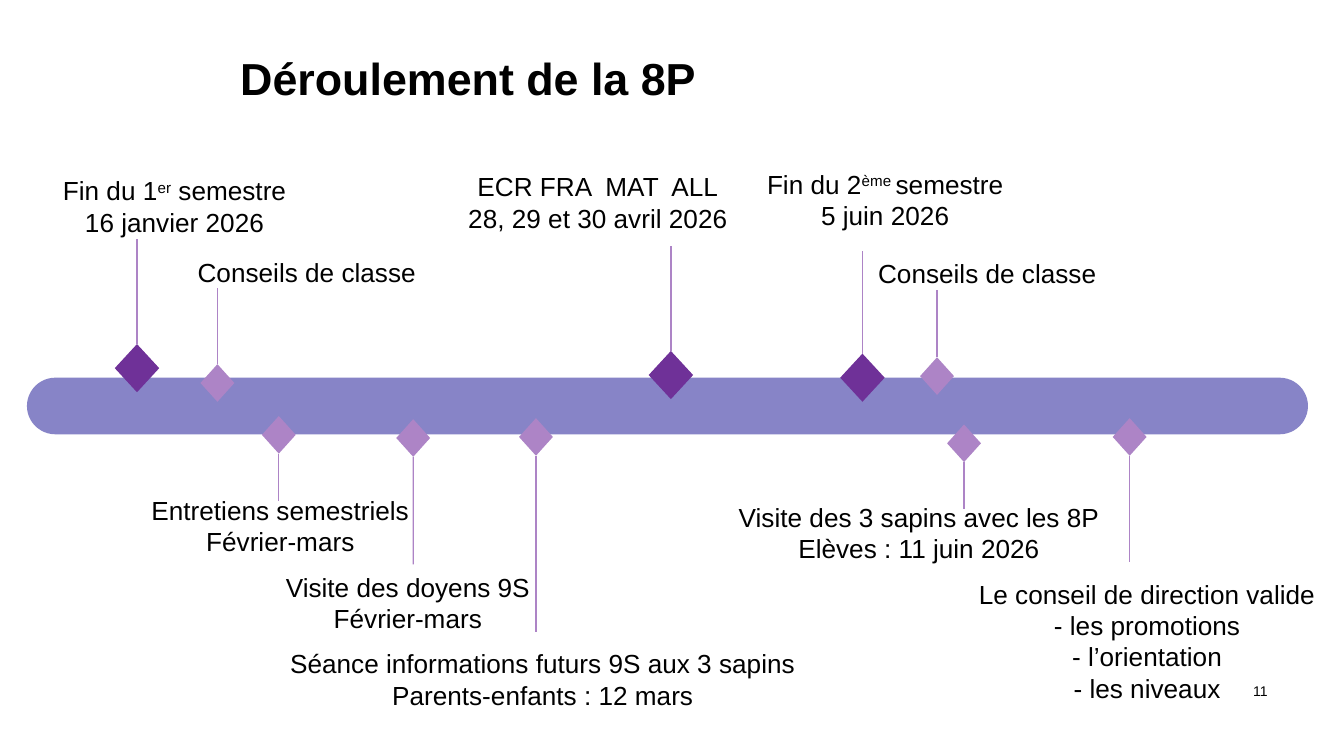
from dataclasses import dataclass

from lxml import etree
from pptx import Presentation
from pptx.dml.color import RGBColor
from pptx.enum.shapes import MSO_CONNECTOR, MSO_SHAPE
from pptx.enum.text import MSO_ANCHOR, PP_ALIGN
from pptx.oxml.ns import qn
from pptx.util import Cm, Pt

BLACK = RGBColor(0x00, 0x00, 0x00)
BAR_BLUE = RGBColor(0x87, 0x84, 0xC7)
LILAC = RGBColor(0xAD, 0x84, 0xC6)
PURPLE = RGBColor(0x6F, 0x31, 0x98)
FONT = "Arial"

ROUNDED, DIAMOND = MSO_SHAPE.ROUNDED_RECTANGLE, MSO_SHAPE.DIAMOND
STRAIGHT = MSO_CONNECTOR.STRAIGHT
TOP, MIDDLE = MSO_ANCHOR.TOP, MSO_ANCHOR.MIDDLE
LEFT, CENTER, RIGHT = PP_ALIGN.LEFT, PP_ALIGN.CENTER, PP_ALIGN.RIGHT
TOP_SITE, BOTTOM_SITE = 0, 2


@dataclass
class Milestone:
    """Event on the timeline, in cm from the top left corner of the bar."""
    x: float
    y: float
    stem_end: float
    label_center: float
    label_top: float
    label_width: float
    lines: tuple
    major: bool = False


MILESTONES = [
    Milestone(2.08, -0.18, -2.62, 2.79, -3.96, 6.6,
              ("Fin du 1^er^ semestre", "16 janvier 2026"), True),
    Milestone(3.6, 0.1, -1.7, 5.29, -2.42, 12.93, ("Conseils de classe",)),
    Milestone(4.76, 1.08, 2.33, 4.79, 2.08, 9.37,
              ("Entretiens semestriels", "Février-mars")),
    Milestone(7.3, 1.14, 3.53, 7.2, 3.53, 14.6,
              ("Visite des doyens 9S", "Février-mars")),
    Milestone(9.62, 1.12, 4.8, 9.75, 4.98, 15.29,
              ("Séance informations futurs 9S aux 3 sapins",
               "Parents-enfants : 12 mars")),
    Milestone(12.17, -0.05, -2.49, 10.79, -4.04, 8.05,
              ("ECR FRA  MAT  ALL", "28, 29 et 30 avril 2026"), True),
    Milestone(15.79, 0, -2.39, 16.22, -4.09, 12.73,
              ("Fin du 2^ème ^semestre", "5 juin 2026"), True),
    Milestone(17.2, -0.03, -1.65, 18.15, -2.39, 6.43, ("Conseils de classe",)),
    Milestone(17.71, 1.24, 2.49, 16.86, 2.21, 14.63,
              ("Visite des 3 sapins avec les 8P", "Elèves : 11 juin 2026")),
    Milestone(20.84, 1.12, 3.48, 21.17, 3.66, 13.69,
              ("Le conseil de direction valide", "- les promotions",
               "- l’orientation", "- les niveaux")),
]


def add_text(slide, box, lines, size, align=LEFT, anchor=TOP, bold=False):
    """Write lines in a box; text between carets is superscript."""
    frame = slide.shapes.add_textbox(*map(Cm, box)).text_frame
    frame.word_wrap = True
    frame.vertical_anchor = anchor
    for number, line in enumerate(lines):
        paragraph = frame.add_paragraph() if number else frame.paragraphs[0]
        paragraph.alignment = align
        for index, part in enumerate(line.split("^")):
            run = paragraph.add_run()
            run.text = part
            run.font.name, run.font.size = FONT, Pt(size)
            run.font.bold = bold
            run.font.color.rgb = BLACK
            if index % 2:
                run.font._element.set("baseline", "30000")


def add_filled(slide, preset, box, color):
    """Add a flat shape without outline."""
    shape = slide.shapes.add_shape(preset, *map(Cm, box))
    shape.shadow.inherit = False
    shape.fill.solid()
    shape.fill.fore_color.rgb = color
    shape.line.fill.background()
    return shape


def add_milestone(slide, left, top, event):
    """Place marker, stem and label relative to the bar corner."""
    width, height = (0.84, 0.91) if event.major else (0.64, 0.71)
    x, y = left + event.x, top + event.y
    marker = add_filled(slide, DIAMOND,
                        (x - width / 2, y - height / 2, width, height),
                        PURPLE if event.major else LILAC)

    stem_end = top + event.stem_end
    stem = slide.shapes.add_connector(STRAIGHT, Cm(x), Cm(y), Cm(x), Cm(stem_end))
    stem.begin_connect(marker, TOP_SITE if stem_end < y else BOTTOM_SITE)
    stem.line.color.rgb = LILAC
    stem.line.width = Pt(0.75)
    etree.SubElement(stem._element.spPr, qn("a:effectLst"))

    label_left = left + event.label_center - event.label_width / 2
    label_height = 0.27 + 0.59 * len(event.lines)
    add_text(slide, (label_left, top + event.label_top, event.label_width, label_height),
             event.lines, 14, CENTER)


def add_timeline(slide, box):
    """Draw the bar in its box and every milestone around it."""
    bar = add_filled(slide, ROUNDED, box, BAR_BLUE)
    bar.adjustments[0] = 0.5
    left, top = box[:2]
    for event in MILESTONES:
        add_milestone(slide, left, top, event)


def add_heading(slide, box):
    """Write the slide title."""
    add_text(slide, box, ["Déroulement de la 8P"], 24, anchor=MIDDLE, bold=True)


def add_page_number(slide, box):
    """Write the page number."""
    add_text(slide, box, ["11"], 7.5, RIGHT, MIDDLE)


def main():
    """Build and save the slide."""
    deck = Presentation()
    deck.slide_width, deck.slide_height = Cm(25.4), Cm(14.29)
    slide = deck.slides.add_slide(deck.slide_layouts[6])
    add_heading(slide, (4.29, 0.74, 18.75, 1.47))
    add_timeline(slide, (0.51, 7.14, 24.21, 1.07))
    add_page_number(slide, (18.49, 12.75, 5.72, 0.61))
    deck.save("out.pptx")


if __name__ == "__main__":
    main()
